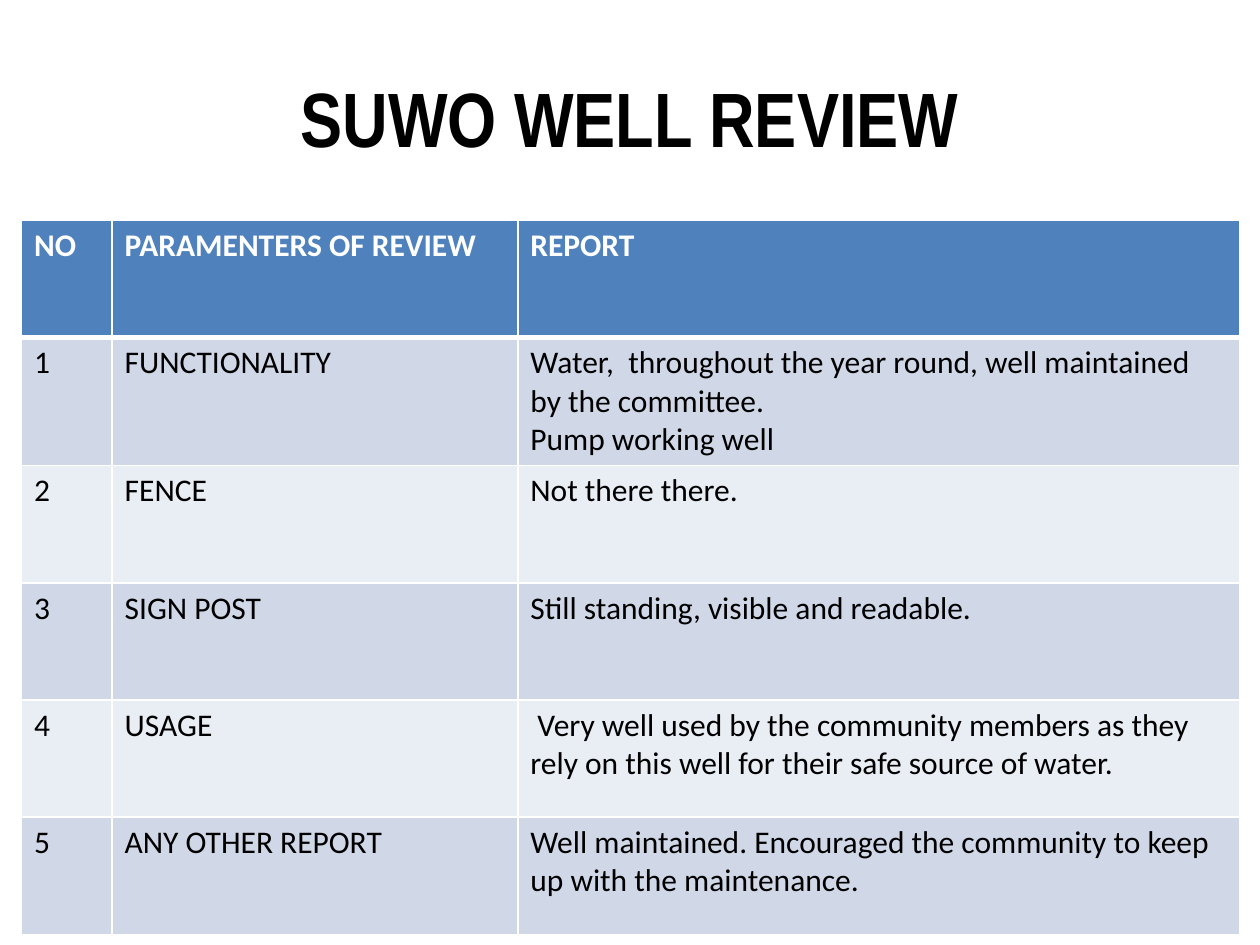
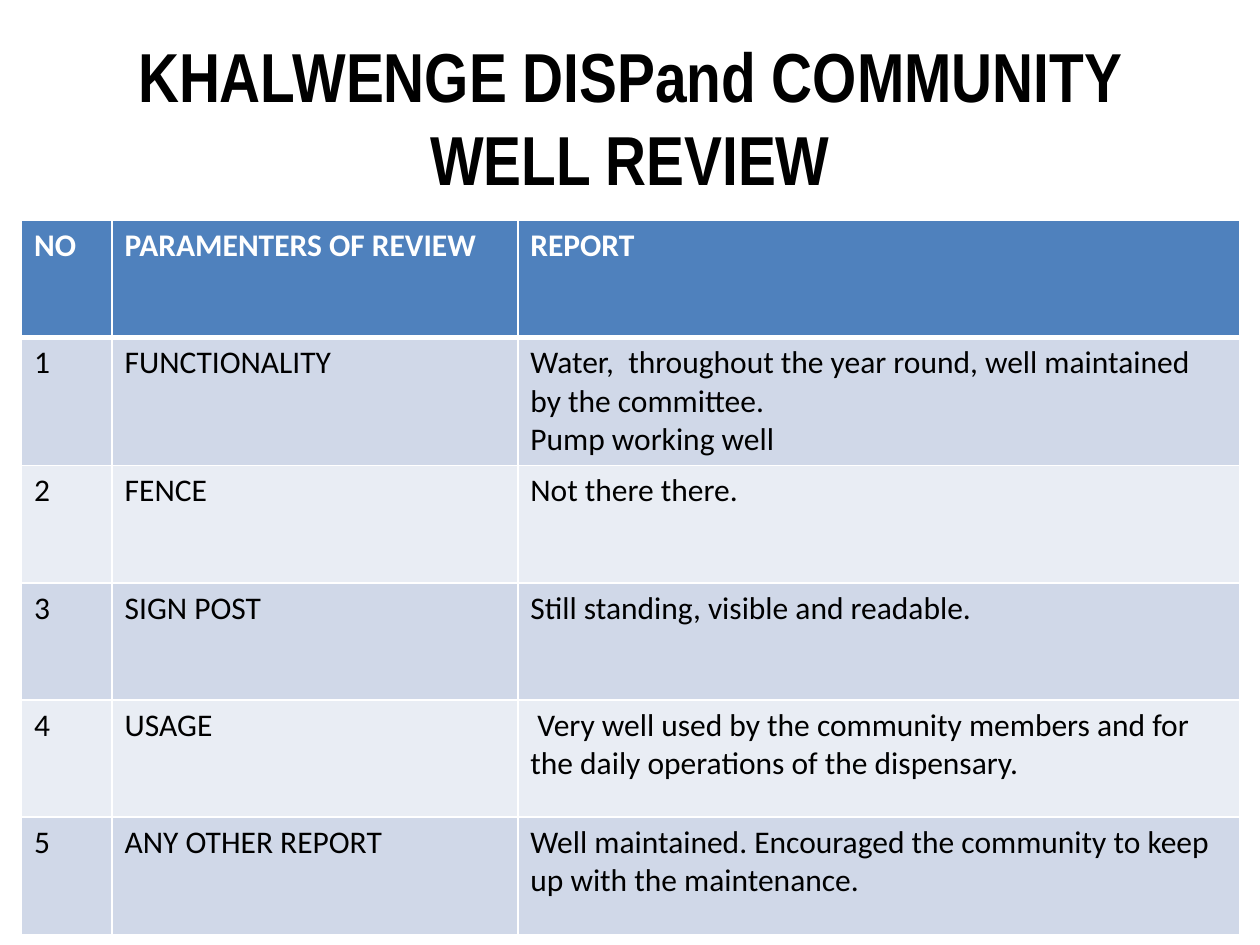
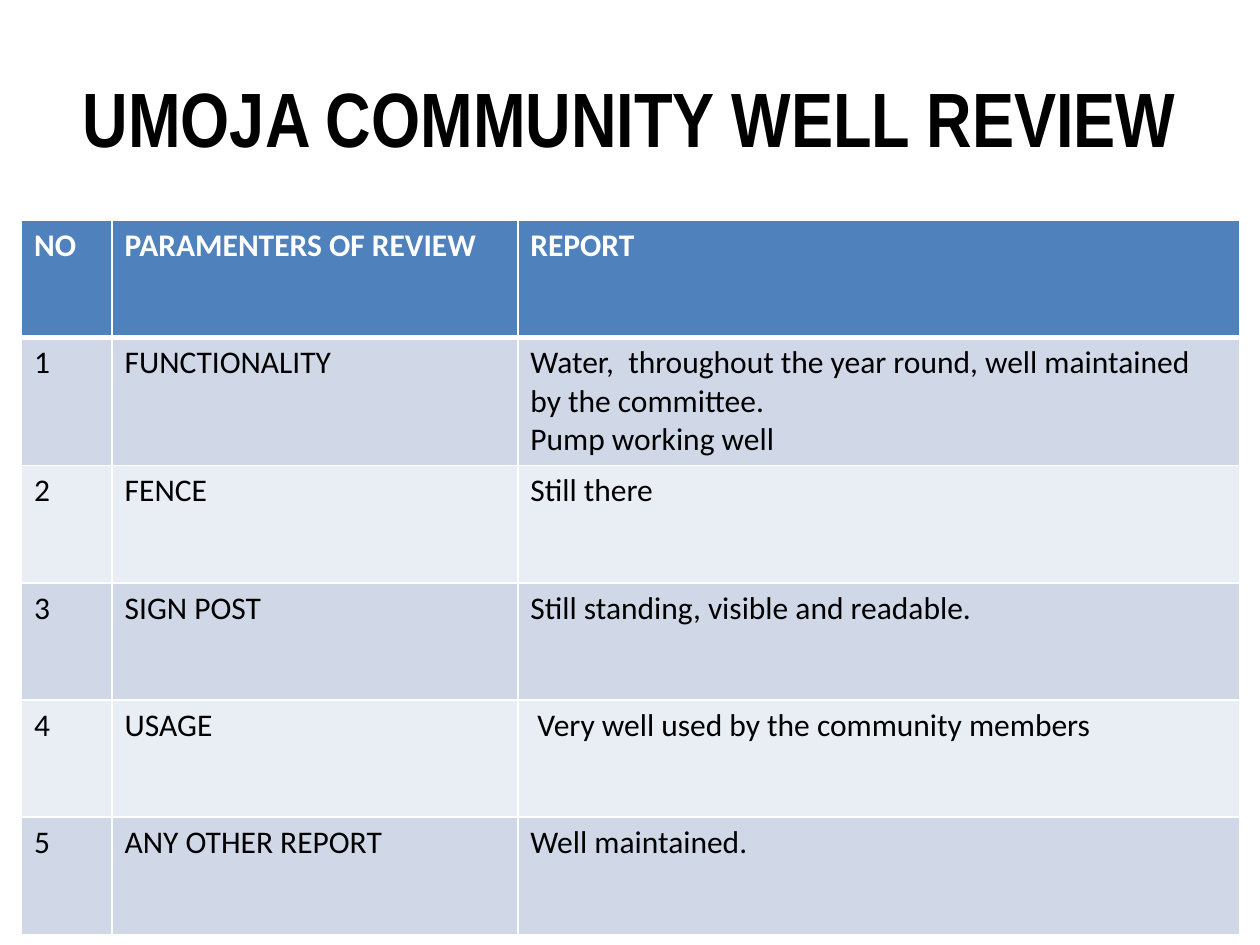
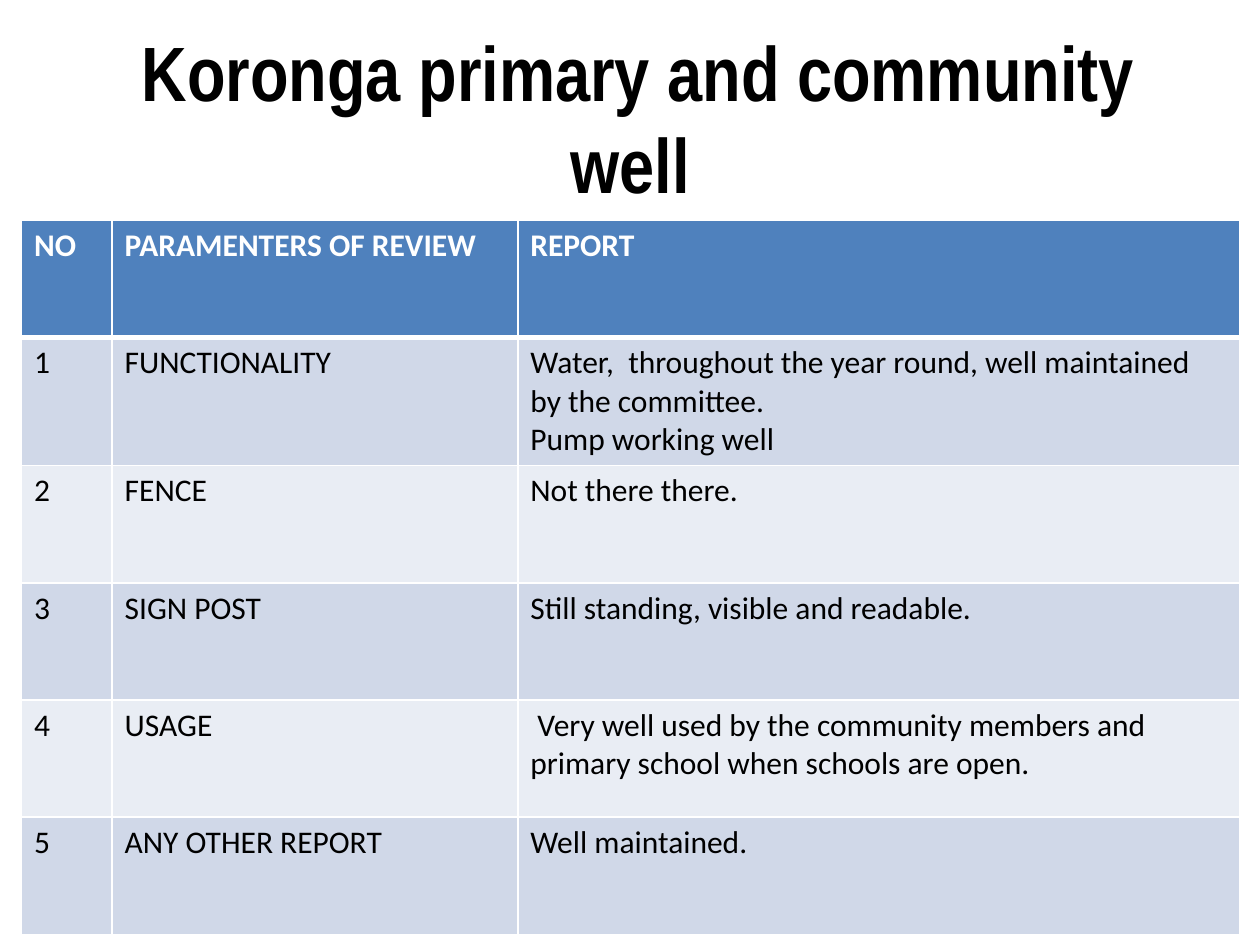
from dataclasses import dataclass

from lxml.etree import SubElement
from pptx import Presentation
from pptx.dml.color import RGBColor
from pptx.enum.text import MSO_ANCHOR, MSO_AUTO_SIZE, PP_ALIGN
from pptx.oxml.ns import qn
from pptx.slide import Slide
from pptx.table import _Cell
from pptx.util import Inches, Pt

BLACK = RGBColor(0x00, 0x00, 0x00)
WHITE = RGBColor(0xFF, 0xFF, 0xFF)
BLUE = RGBColor(0x4F, 0x81, 0xBD)
DARK = RGBColor(0xD0, 0xD8, 0xE8)
LIGHT = RGBColor(0xE9, 0xED, 0xF4)

TITLE_FONT = "Arial Narrow"
CELL_FONT = "Calibri"
COLS = (0.72, 3.22, 5.73)
ROW = 0.93
HEADS = ("NO", "PARAMENTERS OF REVIEW", "REPORT")
TOPICS = ("FUNCTIONALITY", "FENCE", "SIGN POST", "USAGE", "ANY OTHER REPORT")

WATER = ("Water,  throughout the year round, well maintained by the committee."
         "\nPump working well")
NO_FENCE = "Not there there."
SIGN = "Still standing, visible and readable."
USED = " Very well used by the community members"
KEPT = "Well maintained."
URGED = KEPT + " Encouraged the community to keep up with the maintenance."


@dataclass
class Review:
    title: str
    usage: str
    other: str
    fence: str = NO_FENCE
    size: float = 44

    def rows(self) -> list[tuple[str, ...]]:
        """Header row, then one numbered row for each topic."""
        reports = (WATER, self.fence, SIGN, self.usage, self.other)
        body = [(str(num), topic, report) for num, (topic, report)
                in enumerate(zip(TOPICS, reports), 1)]
        return [HEADS, *body]


REVIEWS = (
    Review("SUWO WELL REVIEW",
           USED + " as they rely on this well for their safe source of water.",
           URGED),
    Review("KHALWENGE DISPand COMMUNITY WELL REVIEW",
           USED + " and for the daily operations of the dispensary.",
           URGED, size=39.6),
    Review("UMOJA COMMUNITY WELL REVIEW", USED, KEPT, fence="Still there"),
    Review(" Koronga primary and community well",
           USED + " and primary school when schools are open.", KEPT),
)


def add_title(slide: Slide, review: Review) -> None:
    title = slide.shapes.title
    title.left, title.top = Inches(0.5), Inches(0.3)
    title.width, title.height = Inches(9), Inches(1.25)
    frame = title.text_frame
    frame.text = review.title
    frame.word_wrap = True
    frame.auto_size = MSO_AUTO_SIZE.NONE
    frame.vertical_anchor = MSO_ANCHOR.MIDDLE
    par = frame.paragraphs[0]
    par.alignment = PP_ALIGN.CENTER
    par.font.name = TITLE_FONT
    par.font.size = Pt(review.size)
    par.font.bold = True
    par.font.color.rgb = BLACK


def set_edges(cell: _Cell, row: int) -> None:
    """White cell borders, thick between the header and the first row."""
    props = cell._tc.get_or_add_tcPr()
    widths = {"L": 1, "R": 1, "T": 3 if row == 1 else 1,
              "B": 3 if row == 0 else 1}
    for side, width in widths.items():
        line = SubElement(props, qn(f"a:ln{side}"), w=str(Pt(width)))
        fill = SubElement(line, qn("a:solidFill"))
        SubElement(fill, qn("a:srgbClr"), val=str(WHITE))


def fill_cell(cell: _Cell, text: str, row: int) -> None:
    head = row == 0
    set_edges(cell, row)
    cell.fill.solid()
    cell.fill.fore_color.rgb = BLUE if head else DARK if row % 2 else LIGHT
    cell.text = text
    for par in cell.text_frame.paragraphs:
        par.font.name = CELL_FONT
        par.font.size = Pt(18)
        par.font.bold = head
        par.font.color.rgb = WHITE if head else BLACK


def add_report(slide: Slide, review: Review) -> None:
    rows = review.rows()
    table = slide.shapes.add_table(
        len(rows), len(COLS), Inches(0.17), Inches(1.75),
        Inches(sum(COLS)), Inches(ROW * len(rows))).table
    for col, width in zip(table.columns, COLS):
        col.width = Inches(width)
    for row, texts in enumerate(rows):
        table.rows[row].height = Inches(ROW)
        for col, text in enumerate(texts):
            fill_cell(table.cell(row, col), text, row)


def main() -> None:
    deck = Presentation()
    deck.slide_width, deck.slide_height = Inches(10), Inches(7.5)
    layout = deck.slide_layouts.get_by_name("Title Only")
    for review in REVIEWS:
        slide = deck.slides.add_slide(layout)
        add_title(slide, review)
        add_report(slide, review)
    deck.save("out.pptx")


if __name__ == "__main__":
    main()
